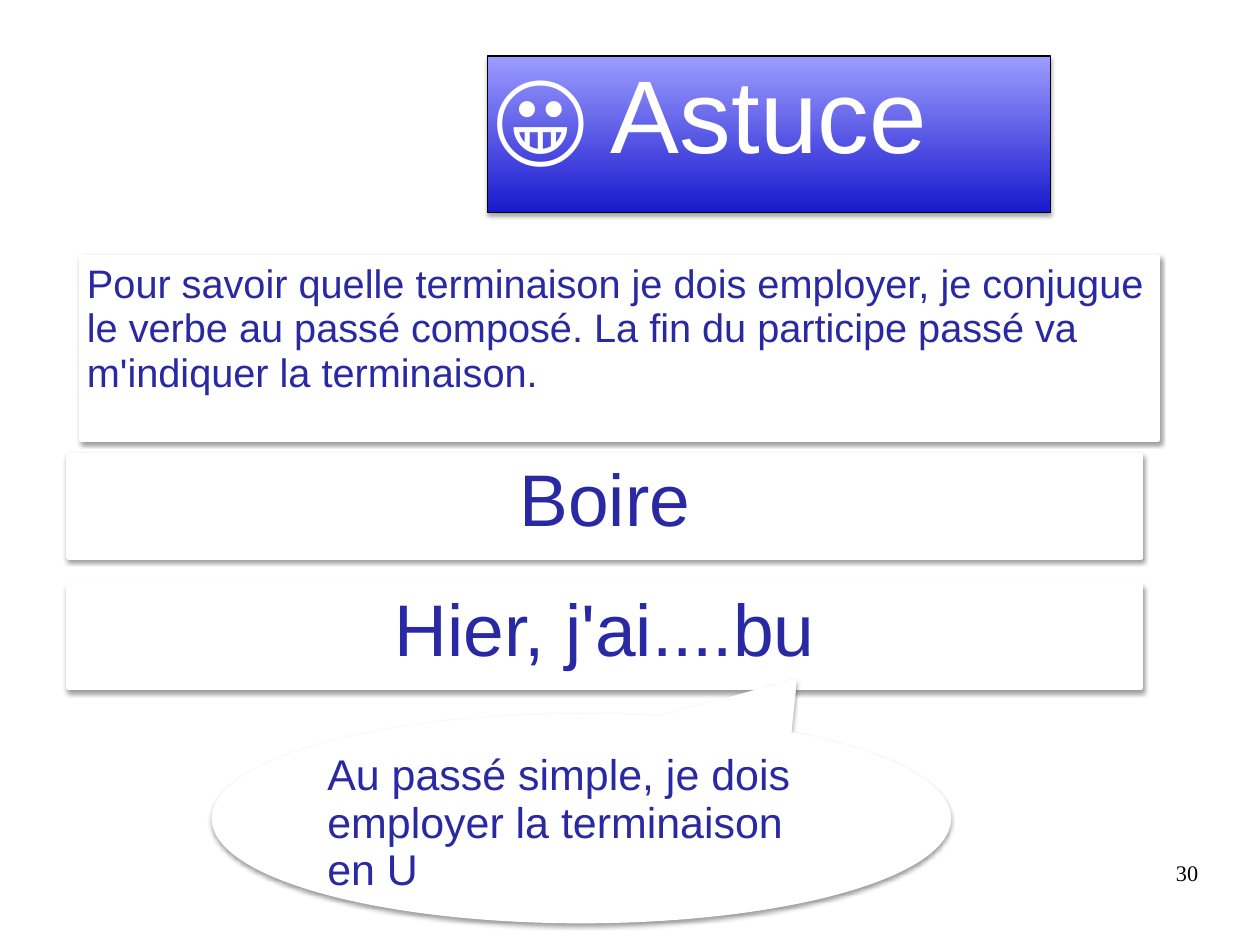
from lxml import etree
from pptx import Presentation
from pptx import util as u
from pptx.dml.color import RGBColor
from pptx.enum import shapes, text
from pptx.oxml import ns

COLORS = {
    "white": "FFFFFF",
    "black": "000000",
    "ink": "2929A3",
    "deep blue": "1919CE",
    "light blue": "9C9CFF",
}


def rgb(name):
    return RGBColor.from_string(COLORS[name])


def write(frame, words, size, color="ink", font="Arial",
          align=text.PP_ALIGN.LEFT, spacing=0.93, inset=0.05):
    frame.word_wrap = True
    frame.vertical_anchor = text.MSO_ANCHOR.TOP
    frame.margin_left = frame.margin_right = u.Inches(inset)
    frame.margin_top = frame.margin_bottom = u.Inches(inset)
    paragraph = frame.paragraphs[0]
    paragraph.alignment = align
    paragraph.line_spacing = spacing
    run = paragraph.add_run()
    run.text = words
    run.font.name = font
    run.font.size = u.Pt(size)
    run.font.color.rgb = rgb(color)


def drop_shadow(shape, opacity, distance):
    """Cast a soft black shadow straight down; opacity in percent, distance in points."""
    shape.shadow.inherit = False
    effects = shape._element.spPr.find(ns.qn("a:effectLst"))
    shadow = etree.SubElement(
        effects, ns.qn("a:outerShdw"), blurRad=str(u.Pt(3)),
        dist=str(u.Pt(distance)), dir=str(90 * 60000), rotWithShape="0")
    tint = etree.SubElement(shadow, ns.qn("a:srgbClr"), val=COLORS["black"])
    etree.SubElement(tint, ns.qn("a:alpha"), val=str(opacity * 1000))


class LessonSlide:
    """Holds the current slide and the style of its boxes."""

    def __init__(self, slide):
        self.shapes = slide.shapes

    def outline(self, kind, box, color, width):
        shape = self.shapes.add_shape(kind, *map(u.Inches, box))
        shape.line.color.rgb = rgb(color)
        shape.line.width = u.Pt(width)
        return shape

    def banner(self, words, box):
        banner = self.outline(shapes.MSO_SHAPE.RECTANGLE, box, "black", 0.75)
        banner.fill.gradient()
        banner.fill.gradient_angle = 90
        for stop, color in zip(banner.fill.gradient_stops, ("deep blue", "light blue")):
            stop.color.rgb = rgb(color)
        drop_shadow(banner, 35, 1.8)
        write(banner.text_frame, words, 65, color="white")

    def card(self, words, box, size, kind=shapes.MSO_SHAPE.RECTANGLE, **text_format):
        card = self.outline(kind, box, "white", 3)
        card.fill.solid()
        card.fill.fore_color.rgb = rgb("white")
        drop_shadow(card, 38, 1.6)
        write(card.text_frame, words, size, **text_format)
        return card

    def callout(self, words, box, size, tip):
        """Add an oval bubble; tip is its point as a share of the size from the centre."""
        bubble = self.card(words, box, size, kind=shapes.MSO_SHAPE.OVAL_CALLOUT)
        for index, offset in enumerate(tip):
            bubble.adjustments[index] = offset

    def page_number(self, number, box):
        label = self.shapes.add_textbox(*map(u.Inches, box))
        write(label.text_frame, number, 14, color="black", font="Times New Roman",
              align=text.PP_ALIGN.RIGHT, spacing=0.95, inset=0)


def main():
    deck = Presentation()
    deck.slide_width, deck.slide_height = u.Inches(11.01), u.Inches(8.26)
    lesson = LessonSlide(deck.slides.add_slide(deck.slide_layouts[6]))

    lesson.page_number("30", (7.9, 7.53, 2.57, 0.21))
    lesson.banner("😀 Astuce", (4.26, 0.49, 4.92, 1.37))
    lesson.card("Pour savoir quelle terminaison je dois employer, je conjugue "
                "le verbe au passé composé. La fin du participe passé va "
                "m'indiquer la terminaison.", (0.71, 2.25, 9.41, 1.59), 25)
    for row, example in enumerate(("Boire", "Hier, j'ai....bu")):
        lesson.card(example, (0.6, 3.98 + 1.14 * row, 9.37, 0.89), 46,
                    align=text.PP_ALIGN.CENTER)
    lesson.callout("Au passé simple, je dois employer la terminaison en U",
                   (1.87, 6.26, 6.42, 1.79), 27, tip=(0.29, -0.67))

    deck.save("out.pptx")


if __name__ == "__main__":
    main()
